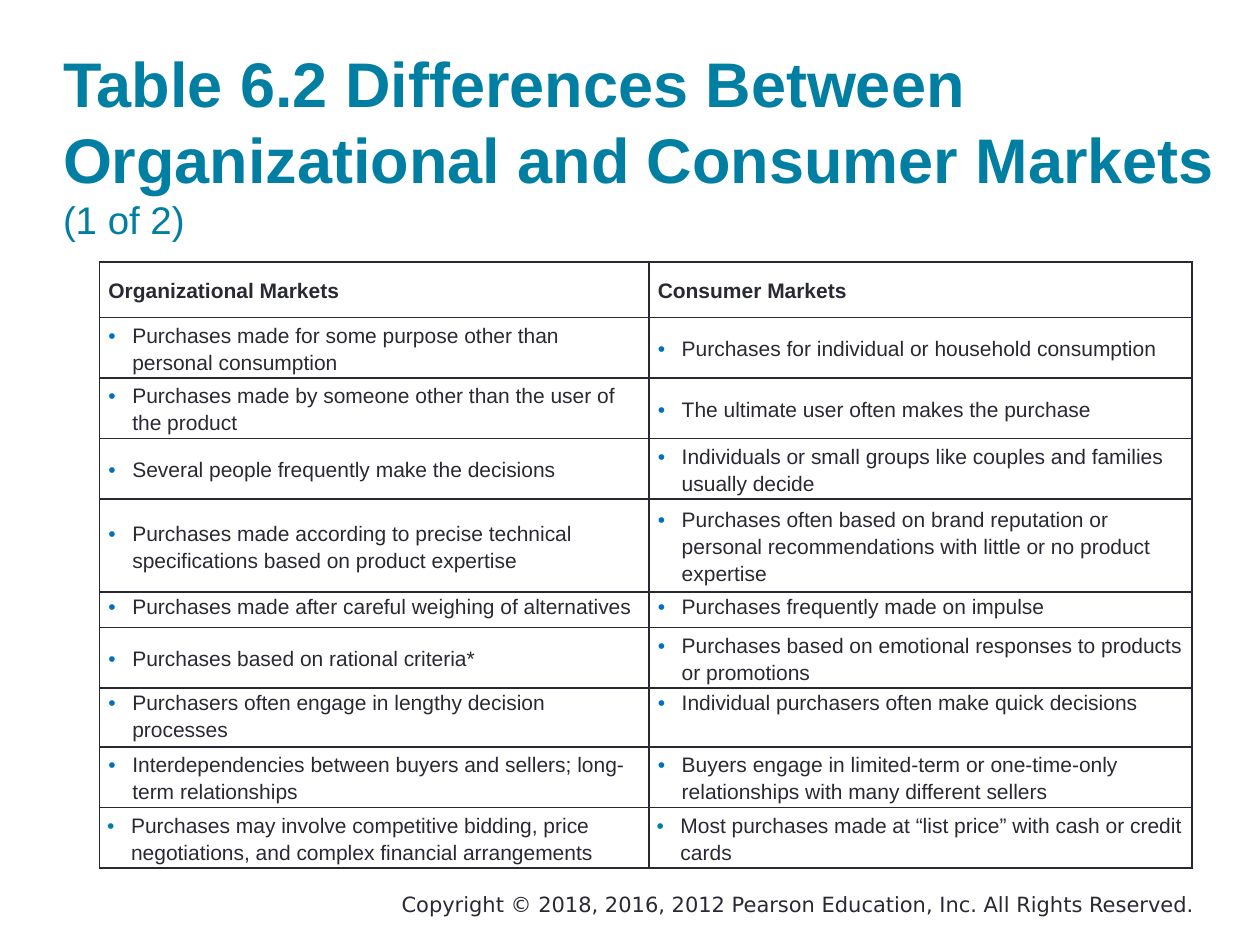
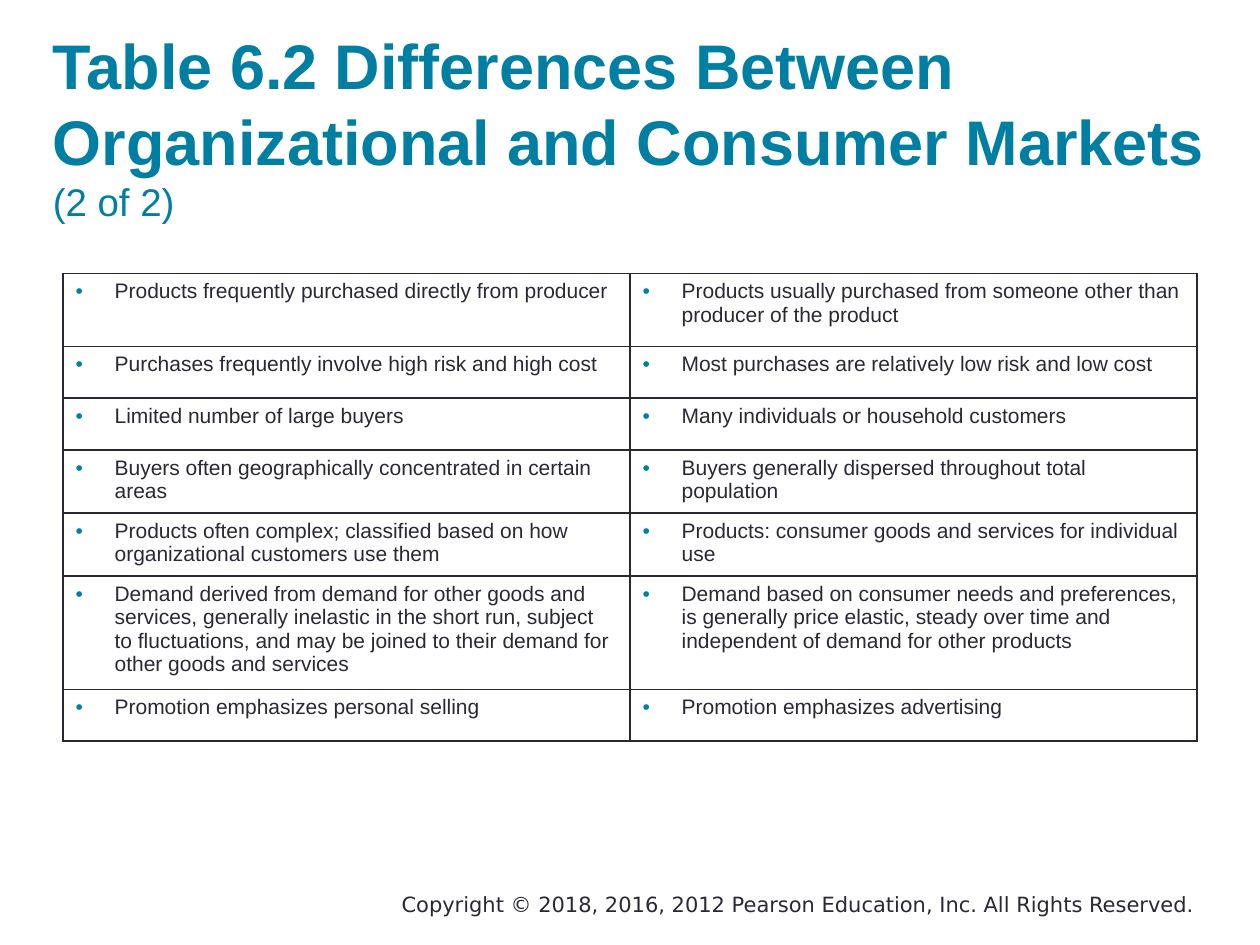
from collections import namedtuple
from dataclasses import dataclass

from lxml.etree import SubElement
from pptx import Presentation
from pptx.dml.color import RGBColor
from pptx.enum.text import MSO_ANCHOR, PP_ALIGN
from pptx.oxml.ns import qn
from pptx.util import Inches, Pt


@dataclass(frozen=True)
class Theme:
    teal: str = "007FA3"
    blue: str = "0070C0"
    ink: str = "292934"
    body_font: str = "Arial"
    footer_font: str = "DejaVu Sans"
    title_size: int = 36
    count_size: int = 22
    text_size: int = 12
    border_width: int = 1


THEME = Theme()
Box = namedtuple("Box", "left top width height")
Row = namedtuple("Row", "height style texts")
PAGE_WIDTH, PAGE_HEIGHT = Inches(10), Inches(7.5)
COLUMNS, ROWS = 100, 75

FOOTER_BOX = Box(17.5, 70.3, 78.3, 3)
TITLE = "Table 6.2 Differences Between Organizational and Consumer Markets "
COPYRIGHT = "Copyright © 2018, 2016, 2012 Pearson Education, Inc. All Rights Reserved."


def across(count):
    return round(PAGE_WIDTH * count / COLUMNS)


def down(count):
    return round(PAGE_HEIGHT * count / ROWS)


def apply_formats(target, formats):
    for name, value in formats.items():
        setattr(target, name, value)


def insets(side, top=0, bottom=0):
    return {"margin_left": across(side), "margin_right": across(side),
            "margin_top": down(top), "margin_bottom": down(bottom)}


@dataclass(frozen=True)
class CellStyle:
    frame: dict
    indent: float = 1.9
    bullet_color: str = THEME.blue
    line_spacing: float = 1.15
    bold: bool = False
    bulleted: bool = True


MIDDLE = {"vertical_anchor": MSO_ANCHOR.MIDDLE}
TOP = {"vertical_anchor": MSO_ANCHOR.TOP}
HEADING = CellStyle({**insets(0.7), **MIDDLE}, bold=True, bulleted=False)
CENTRED = CellStyle({**insets(0.7), **MIDDLE})
RAISED = CellStyle({**insets(0.7), **TOP})
CLOSING = CellStyle({**insets(0.6, top=0.1), **MIDDLE}, bullet_color=THEME.teal)
ROOMY = CellStyle({**insets(1, 0.5, 0.5), **TOP}, indent=3.1,
                  bullet_color=THEME.teal, line_spacing=1.0)

FIRST_ROWS = [
    Row(4.4, HEADING, ("Organizational Markets", "Consumer Markets")),
    Row(4.8, CENTRED, ("Purchases made for some purpose other than personal consumption",
                       "Purchases for individual or household consumption")),
    Row(4.8, CENTRED, ("Purchases made by someone other than the user of the product",
                       "The ultimate user often makes the purchase")),
    Row(4.8, CENTRED, ("Several people frequently make the decisions",
                       "Individuals or small groups like couples and families usually decide")),
    Row(7.4, CENTRED, ("Purchases made according to precise technical specifications "
                       "based on product expertise",
                       "Purchases often based on brand reputation or personal "
                       "recommendations with little or no product expertise")),
    Row(2.8, RAISED, ("Purchases made after careful weighing of alternatives",
                      "Purchases frequently made on impulse")),
    Row(4.8, CENTRED, ("Purchases based on rational criteria*",
                       "Purchases based on emotional responses to products or promotions")),
    Row(4.7, RAISED, ("Purchasers often engage in lengthy decision processes",
                      "Individual purchasers often make quick decisions")),
    Row(4.8, CENTRED, ("Interdependencies between buyers and sellers; long-term relationships",
                       "Buyers engage in limited-term or one-time-only relationships "
                       "with many different sellers")),
    Row(4.8, CLOSING, ("Purchases may involve competitive bidding, price negotiations, "
                       "and complex financial arrangements",
                       "Most purchases made at “list price” with cash or credit cards")),
]

SECOND_ROWS = [
    Row(5.8, ROOMY, ("Products frequently purchased directly from producer",
                     "Products usually purchased from someone other than\n"
                     "producer of the product")),
] + [Row(4.1, ROOMY, texts) for texts in (
    ("Purchases frequently involve high risk and high cost",
     "Most purchases are relatively low risk and low cost"),
    ("Limited number of large buyers",
     "Many individuals or household customers"),
    ("Buyers often geographically concentrated in certain areas",
     "Buyers generally dispersed throughout total population"),
    ("Products often complex; classified based on how organizational customers use them",
     "Products: consumer goods and services for individual use"),
    ("Demand derived from demand for other goods and services, generally inelastic "
     "in the short run, subject to fluctuations, and may be joined to their demand "
     "for other goods and services",
     "Demand based on consumer needs and preferences, is generally price elastic, "
     "steady over time and independent of demand for other products"),
    ("Promotion emphasizes personal selling",
     "Promotion emphasizes advertising"),
)]


def add_span(para, text, color, size=THEME.text_size, name=THEME.body_font, bold=False):
    span = para.add_run()
    span.text = text
    apply_formats(span.font, {"size": Pt(size), "name": name, "bold": bold})
    span.font.color.rgb = RGBColor.from_string(color)


def add_text_box(page, box, formats):
    shape = page.shapes.add_textbox(across(box.left), down(box.top),
                                    across(box.width), down(box.height))
    apply_formats(shape.text_frame, {"word_wrap": True, **formats})
    return shape.text_frame.paragraphs[0]


def add_title(page, box, count):
    para = add_text_box(page, box, {**insets(0), "vertical_anchor": MSO_ANCHOR.BOTTOM})
    add_span(para, TITLE, THEME.teal, THEME.title_size, bold=True)
    add_span(para, count, THEME.teal, THEME.count_size)


def add_footer(page, box):
    para = add_text_box(page, box, TOP)
    para.alignment = PP_ALIGN.RIGHT
    add_span(para, COPYRIGHT, THEME.ink, name=THEME.footer_font)


def add_solid_color(parent, color):
    SubElement(parent, qn("a:srgbClr"), val=color)


def set_bullet(para, style, first):
    properties = para._p.get_or_add_pPr()
    indent = across(style.indent)
    properties.set("marL", str(indent))
    properties.set("indent", str(-indent if first else 0))
    if first:
        add_solid_color(SubElement(properties, qn("a:buClr")), style.bullet_color)
        SubElement(properties, qn("a:buFont"), typeface=THEME.body_font)
        SubElement(properties, qn("a:buChar"), char="•")


def set_borders(cell):
    properties = cell._tc.get_or_add_tcPr()
    for side in ("lnL", "lnR", "lnT", "lnB"):
        line = SubElement(properties, qn(f"a:{side}"), w=str(Pt(THEME.border_width)))
        add_solid_color(SubElement(line, qn("a:solidFill")), THEME.ink)


def fill_cell(cell, text, style):
    set_borders(cell)
    cell.fill.background()
    apply_formats(cell, style.frame)
    for number, line in enumerate(text.split("\n")):
        frame = cell.text_frame
        para = frame.add_paragraph() if number else frame.paragraphs[0]
        if style.bulleted:
            set_bullet(para, style, number == 0)
        para.line_spacing = style.line_spacing
        add_span(para, line, THEME.ink, bold=style.bold)


def add_comparison(page, box, shares, rows):
    table = page.shapes.add_table(len(rows), len(shares), across(box.left), down(box.top),
                                  across(box.width), down(box.height)).table
    apply_formats(table, {"first_row": False, "horz_banding": False})
    for column, share in zip(table.columns, shares):
        column.width = across(box.width * share)
    for number, row in enumerate(rows):
        table.rows[number].height = down(row.height)
        for cell, text in zip(table.rows[number].cells, row.texts):
            fill_cell(cell, text, row.style)


def add_page(deck, title_box, count, table_box, shares, rows):
    page = deck.slides.add_slide(deck.slide_layouts[6])
    add_footer(page, FOOTER_BOX)
    add_title(page, title_box, count)
    add_comparison(page, table_box, shares, rows)


def main():
    deck = Presentation()
    apply_formats(deck, {"slide_width": PAGE_WIDTH, "slide_height": PAGE_HEIGHT})
    add_page(deck, Box(5, 1.7, 92.5, 17.5), "(1 of 2)",
             Box(7.9, 20.8, 86.7, 48.3), (0.503, 0.497), FIRST_ROWS)
    add_page(deck, Box(4.2, 3.3, 91.7, 14.5), "(2 of 2)",
             Box(5, 21.7, 90, 37), (0.5, 0.5), SECOND_ROWS)
    deck.save("out.pptx")


if __name__ == "__main__":
    main()
